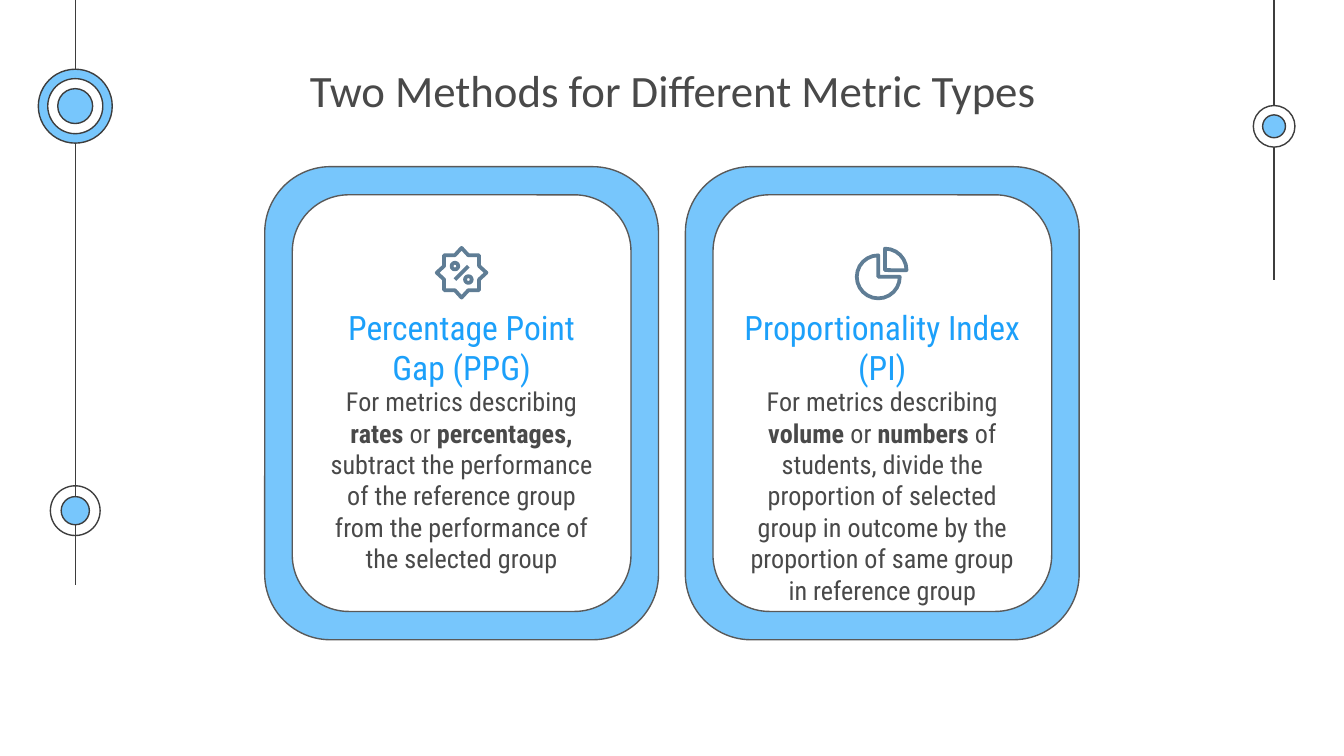
from lxml.etree import SubElement
from pptx import Presentation
from pptx.dml.color import RGBColor
from pptx.enum.shapes import MSO_CONNECTOR, MSO_SHAPE
from pptx.enum.text import MSO_ANCHOR, MSO_AUTO_SIZE, PP_ALIGN
from pptx.oxml.ns import qn
from pptx.util import Inches, Pt

# Content: *stars* mark bold words; head gives top and height
TITLE = "Two Methods for Different Metric Types"
CARDS = [
    {"name": "Percentage Point Gap (PPG)", "head": (2.41, 0.34), "icon": "badge",
     "text": "For metrics describing *rates* or *percentages, *subtract the "
             "performance of the reference group from the performance of the "
             "selected group"},
    {"name": "Proportionality Index (PI)", "head": (2.43, 0.31), "icon": "pie",
     "text": "For metrics describing *volume* or *numbers* of students, divide "
             "the proportion of selected group in outcome by the proportion of "
             "same group in reference group"},
]
# Side rails: x, bottom end
RAILS = [(0.56, 4.35), (9.48, 2.08)]
# Ring sets: centre x, centre y, (diameter, fill) from outside in
RINGS = [
    (0.56, 3.8, [(0.37, None), (0.21, "blue")]),
    (9.48, 0.94, [(0.31, "white"), (0.17, "blue")]),
    (0.56, 0.79, [(0.55, "blue"), (0.41, "white"), (0.26, "blue")]),
]

THEME = {
    "blue": "77C6FC", "white": "FFFFFF", "rail": "3D3D3D", "edge": "595959",
    "ink": "494949", "head": "1CA0FA", "icon": "5F7D95",
    "title_font": "Calibri", "font": "Roboto Condensed",
    "title_size": 24, "head_size": 18, "text_size": 14,
    "thin": 0.75, "bold": 2,
}
LEFT, TOP, WIDE, HIGH, STEP = 1.97, 1.24, 2.93, 3.52, 3.13
IN_W, IN_H, ROUND = 2.52, 3.1, 0.167
TEXT_W, ICON_Y = 2.28, 2.03


def tint(name):
    return RGBColor.from_string(THEME[name])


def paint(shape, fill, line, width):
    shape.shadow.inherit = False
    if fill:
        shape.fill.solid()
        shape.fill.fore_color.rgb = tint(fill)
    else:
        shape.fill.background()
    shape.line.color.rgb = tint(line)
    shape.line.width = Pt(width)
    return shape


def centred(slide, kind, x, y, w, h, fill=None, line="rail", width=THEME["thin"]):
    box = [Inches(v) for v in (x - w / 2, y - h / 2, w, h)]
    return paint(slide.shapes.add_shape(kind, *box), fill, line, width)


def rule(slide, x1, y1, x2, y2, color="rail", width=THEME["thin"]):
    ends = [Inches(v) for v in (x1, y1, x2, y2)]
    line = slide.shapes.add_connector(MSO_CONNECTOR.STRAIGHT, *ends)
    line.line.color.rgb = tint(color)
    line.line.width = Pt(width)
    SubElement(line.element.spPr, qn("a:effectLst"))
    return line


def write(slide, holder, text, box, font="font", size="text_size", color="ink",
          anchor=MSO_ANCHOR.TOP):
    slide.shapes.element.append(holder.element)  # bring to front
    holder.left, holder.top, holder.width, holder.height = map(Inches, box)
    frame = holder.text_frame
    frame.word_wrap = True
    frame.auto_size = MSO_AUTO_SIZE.NONE
    frame.vertical_anchor = anchor
    frame.margin_left = frame.margin_right = Inches(0.1)
    frame.margin_top = frame.margin_bottom = Inches(0.1)
    para = frame.paragraphs[0]
    para.alignment = PP_ALIGN.CENTER
    para.line_spacing = 1.0
    para.space_before = Pt(0)
    props = para._p.get_or_add_pPr()
    props.set("marL", "0")
    props.set("indent", "0")
    SubElement(props, qn("a:buNone"))
    for i, part in enumerate(text.split("*")):
        run = para.add_run()
        run.text = part
        run.font.name = THEME[font]
        run.font.size = Pt(THEME[size])
        run.font.bold = i % 2 == 1
        run.font.color.rgb = tint(color)


def badge(slide, x, y):
    pen = {"line": "icon", "width": THEME["bold"]}
    # One quarter of the star, turned four times
    turn = [(0, -0.185), (0.05, -0.13), (0.13, -0.13), (0.13, -0.05)]
    dots = []
    for _ in range(4):
        dots += [(Inches(x + a), Inches(y + b)) for a, b in turn]
        turn = [(-b, a) for a, b in turn]
    build = slide.shapes.build_freeform(*dots[0])
    build.add_line_segments(dots[1:], close=True)
    paint(build.convert_to_shape(), None, **pen)
    for d in (-0.05, 0.05):
        centred(slide, MSO_SHAPE.OVAL, x + d, y + d, 0.05, 0.05, **pen)
    rule(slide, x + 0.05, y - 0.05, x - 0.05, y + 0.05, "icon", THEME["bold"])


def pie(slide, x, y):
    pen = {"line": "icon", "width": THEME["bold"]}
    # Three quarters, then the loose quarter
    for dx, dy, start, end in [(-0.03, 0.03, 0, 162), (0.02, -0.02, 162, 0)]:
        part = centred(slide, MSO_SHAPE.PIE, x + dx, y + dy, 0.32, 0.32, **pen)
        part.adjustments[0], part.adjustments[1] = start, end


ICONS = {"badge": badge, "pie": pie}


def main():
    deck = Presentation()
    deck.slide_width = Inches(10)
    deck.slide_height = deck.slide_width * 9 // 16
    slide = deck.slides.add_slide(deck.slide_layouts.get_by_name("Comparison"))
    hold = {h.placeholder_format.idx: h for h in slide.placeholders}

    # Rails and rings
    for x, end in RAILS:
        rule(slide, x, 0, x, end)
    for x, y, discs in RINGS:
        for d, fill in discs:
            centred(slide, MSO_SHAPE.OVAL, x, y, d, d, fill)

    # Title
    write(slide, hold[0], TITLE, (1.98, 0.37, 6.05, 0.67),
          font="title_font", size="title_size")

    # Cards
    for i, card in enumerate(CARDS):
        mid = LEFT + i * STEP + WIDE / 2
        for w, h, fill in [(WIDE, HIGH, "blue"), (IN_W, IN_H, "white")]:
            frame = centred(slide, MSO_SHAPE.ROUNDED_RECTANGLE, mid,
                            TOP + HIGH / 2, w, h, fill, "edge")
            frame.adjustments[0] = ROUND
        x = mid - TEXT_W / 2
        top, high = card["head"]
        write(slide, hold[2 * i + 2], card["text"], (x, 2.77, TEXT_W, 1.49))
        write(slide, hold[2 * i + 1], card["name"], (x, top, TEXT_W, high),
              size="head_size", color="head", anchor=MSO_ANCHOR.MIDDLE)
        ICONS[card["icon"]](slide, mid, ICON_Y)

    deck.save("out.pptx")


if __name__ == "__main__":
    main()
